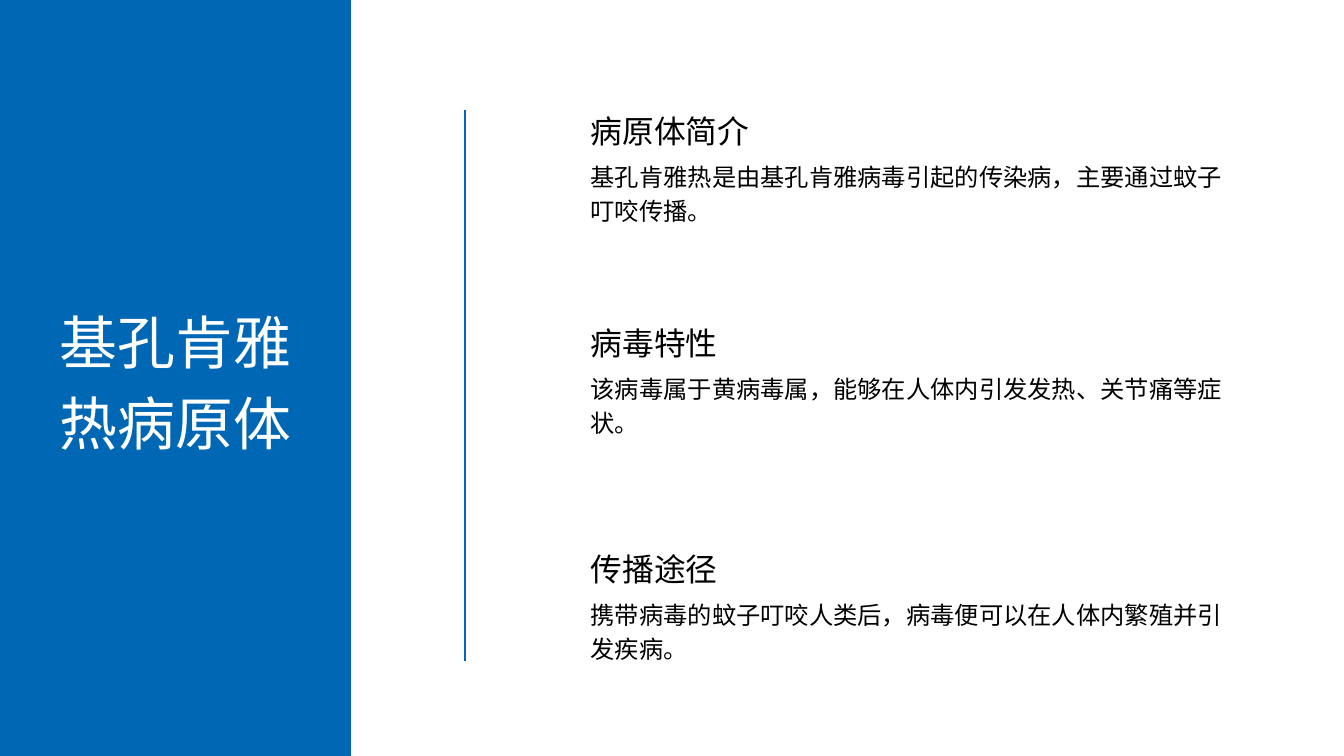
"""Build the slide on the pathogen of chikungunya fever."""
from dataclasses import dataclass

import lxml.etree
import pptx
import pptx.dml.color
import pptx.enum.shapes
import pptx.enum.text
import pptx.oxml.ns
import pptx.util
from pptx.util import Inches


@dataclass(frozen=True)
class Theme:
    font: str = "Noto Sans CJK SC"
    blue: str = "0067B4"
    white: str = "FFFFFF"
    black: str = "000000"
    title_size: int = 62
    heading_size: int = 34
    body_size: int = 26
    line_spacing: float = 1.4


THEME = Theme()
SLIDE_WIDTH, SLIDE_HEIGHT = 20, 11.25
TOPIC_LEFT = 8.79
BODY_OFFSET = 0.77
TOPICS = [
    (1.57, "病原体简介", "基孔肯雅热是由基孔肯雅病毒引起的传染病，主要通过蚊子叮咬传播。"),
    (4.73, "病毒特性", "该病毒属于黄病毒属，能够在人体内引发发热、关节痛等症状。"),
    (8.09, "传播途径", "携带病毒的蚊子叮咬人类后，病毒便可以在人体内繁殖并引发疾病。"),
]


def rgb(value):
    return pptx.dml.color.RGBColor.from_string(value)


def add_text(shapes, box, text, size, color, align=pptx.enum.text.PP_ALIGN.LEFT):
    frame = shapes.add_textbox(*map(Inches, box)).text_frame
    frame.word_wrap = True
    frame.margin_left = frame.margin_right = 0
    frame.margin_top = frame.margin_bottom = 0
    paragraph = frame.paragraphs[0]
    paragraph.text = text
    paragraph.alignment = align
    paragraph.line_spacing = pptx.util.Pt(size * THEME.line_spacing)
    paragraph.font.size = pptx.util.Pt(size)
    paragraph.font.color.rgb = rgb(color)
    paragraph.font.name = THEME.font
    qn = pptx.oxml.ns.qn
    defaults = paragraph._p.pPr.find(qn("a:defRPr"))
    lxml.etree.SubElement(defaults, qn("a:ea"), typeface=THEME.font)


def add_divider(slide, x, top, bottom):
    divider = slide.shapes.add_connector(
        pptx.enum.shapes.MSO_CONNECTOR.STRAIGHT,
        Inches(x), Inches(top), Inches(x), Inches(bottom))
    divider.line.color.rgb = rgb(THEME.blue)
    divider.line.width = pptx.util.Pt(3)
    lxml.etree.SubElement(divider._element.spPr, pptx.oxml.ns.qn("a:effectLst"))


def add_topic(slide, top, heading, body):
    topic = slide.shapes.add_group_shape()
    add_text(topic.shapes, (TOPIC_LEFT, top, 8.22, 0.62),
             heading, THEME.heading_size, THEME.black)
    add_text(topic.shapes, (TOPIC_LEFT, top + BODY_OFFSET, 9.46, 0.97),
             body, THEME.body_size, THEME.black)


def add_title_panel(slide, title):
    panel = slide.shapes.add_shape(
        pptx.enum.shapes.MSO_SHAPE.RECTANGLE,
        0, 0, Inches(5.22), Inches(SLIDE_HEIGHT))
    panel.shadow.inherit = False
    panel.fill.solid()
    panel.fill.fore_color.rgb = rgb(THEME.blue)
    panel.line.fill.background()
    add_text(slide.shapes, (0.72, 4.39, 3.78, 2.35), title,
             THEME.title_size, THEME.white, pptx.enum.text.PP_ALIGN.CENTER)


def main():
    presentation = pptx.Presentation()
    presentation.slide_width = Inches(SLIDE_WIDTH)
    presentation.slide_height = Inches(SLIDE_HEIGHT)
    slide = presentation.slides.add_slide(presentation.slide_layouts[6])
    add_divider(slide, 6.92, 1.63, 9.83)
    for top, heading, body in TOPICS:
        add_topic(slide, top, heading, body)
    add_title_panel(slide, "基孔肯雅热病原体")
    presentation.save("out.pptx")


if __name__ == "__main__":
    main()
